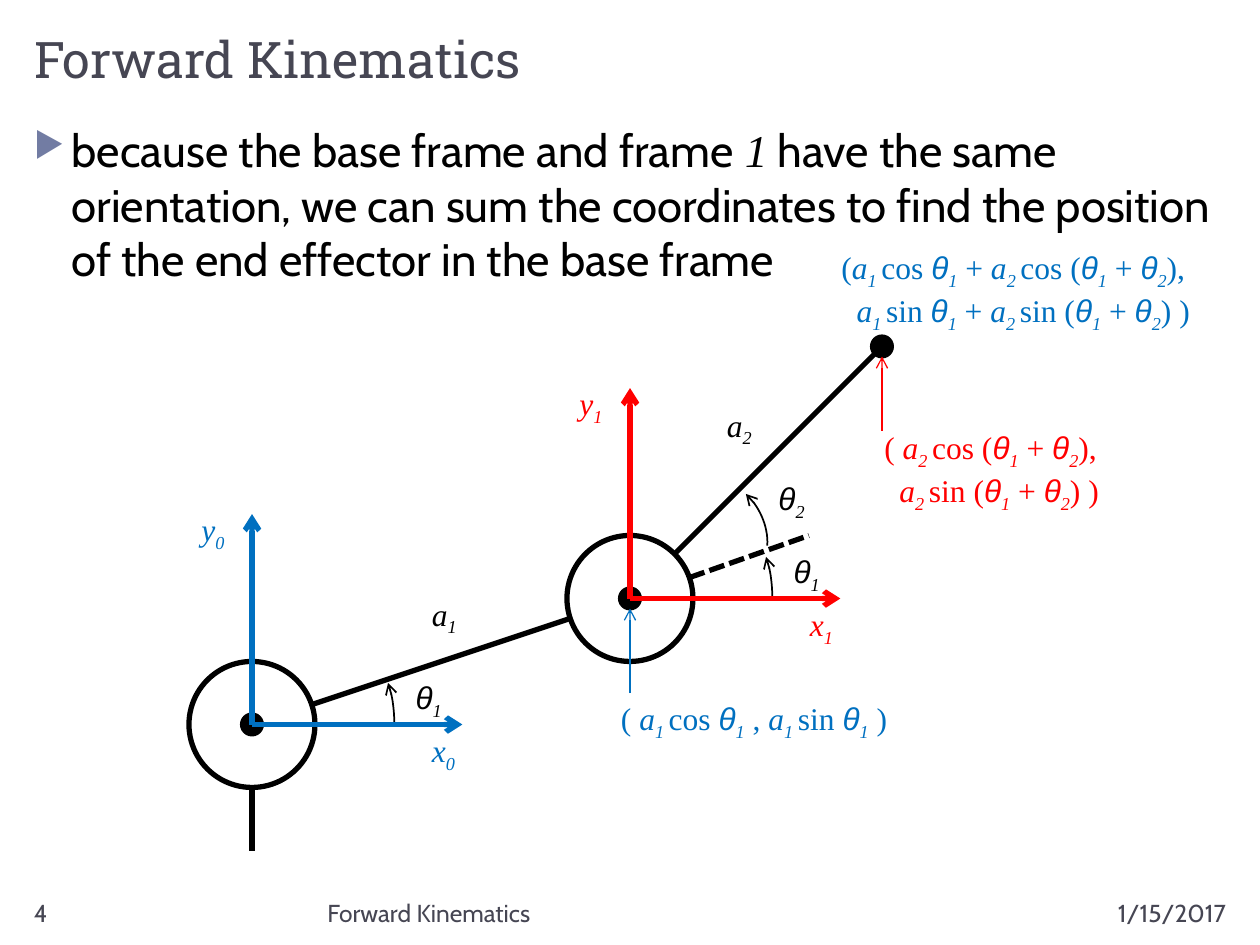
from dataclasses import dataclass

from lxml.etree import SubElement
from pptx import Presentation
from pptx.dml.color import RGBColor
from pptx.enum.dml import MSO_LINE as Dash
from pptx.enum.shapes import MSO_CONNECTOR as Link, MSO_SHAPE as Kind
from pptx.enum.text import MSO_ANCHOR as Anchor, MSO_AUTO_SIZE as Fit, PP_ALIGN as Align
from pptx.oxml.ns import qn
from pptx.util import Cm, Pt

BLACK = RGBColor(0, 0, 0)
WHITE = RGBColor(255, 255, 255)
BLUE = RGBColor(0x00, 0x70, 0xC0)
RED = RGBColor(255, 0, 0)
SLATE = RGBColor(0x46, 0x46, 0x53)
MARK = "727CA3"
SERIF = "Times New Roman"
SANS = "Cabin"

Point = tuple[float, float]


@dataclass
class Joint:
    x: float
    y: float
    color: RGBColor
    index: str


@dataclass
class Bar:
    start: Point
    end: Point
    color: RGBColor = BLACK
    width: float = 3
    arrow: bool = False
    dotted: bool = False


@dataclass
class Label:
    x: float
    y: float
    width: float
    lines: list[str]
    color: RGBColor = BLACK


@dataclass
class Foot:
    x: float
    width: float
    text: str
    align: Align = Align.LEFT


def unit(inches: float) -> Cm:
    return Cm(inches * 2.54)


def style(run, name: str, size: float, color: RGBColor) -> None:
    run.font.name = name
    run.font.size = Pt(size)
    run.font.color.rgb = color


def add_box(slide, x: float, y: float, width: float, height: float):
    frame = slide.shapes.add_textbox(*map(unit, (x, y, width, height))).text_frame
    frame.word_wrap = True
    return frame


def add_tip(line, end: str) -> None:
    SubElement(line._get_or_add_ln(), qn(f"a:{end}"), type="arrow")


def draw_bar(slide, bar: Bar) -> None:
    link = slide.shapes.add_connector(
        Link.STRAIGHT, *map(unit, (*bar.start, *bar.end)))
    link.line.color.rgb = bar.color
    link.line.width = Pt(bar.width)
    if bar.dotted:
        link.line.dash_style = Dash.SQUARE_DOT
    if bar.arrow:
        add_tip(link.line, "tailEnd")
    SubElement(link._element.spPr, qn("a:effectLst"))


def draw_disc(slide, x: float, y: float, size: float, fill: RGBColor, width: float) -> None:
    disc = slide.shapes.add_shape(
        Kind.OVAL, *map(unit, (x - size / 2, y - size / 2, size, size)))
    disc.shadow.inherit = False
    disc.fill.solid()
    disc.fill.fore_color.rgb = fill
    disc.line.color.rgb = BLACK
    disc.line.width = Pt(width)


def draw_dot(slide, x: float, y: float) -> None:
    draw_disc(slide, x, y, 0.17, BLACK, 1.5)


def draw_arc(slide, knots: list[Point], steps: int = 16) -> None:
    def curve(t: float) -> Point:
        s = 1 - t
        parts = (s ** 3, 3 * s * s * t, 3 * s * t * t, t ** 3)
        x, y = (sum(w * k[i] for w, k in zip(parts, knots)) for i in (0, 1))
        return unit(x), unit(y)

    dots = [curve(i / steps) for i in range(steps + 1)]
    pen = slide.shapes.build_freeform(*dots[0])
    pen.add_line_segments(dots[1:], close=False)
    arc = pen.convert_to_shape()
    arc.shadow.inherit = False
    arc.fill.background()
    arc.line.color.rgb = BLACK
    arc.line.width = Pt(1)
    add_tip(arc.line, "headEnd")


def draw_label(slide, label: Label) -> None:
    frame = add_box(slide, label.x, label.y, label.width, 0.1 + 0.3 * len(label.lines))
    for row, line in enumerate(label.lines):
        para = frame.add_paragraph() if row else frame.paragraphs[0]
        if row:
            para._p.get_or_add_pPr().set("marL", str(unit(0.12)))
        for part in line.split("|"):
            run = para.add_run()
            run.text = part.lstrip("_*")
            style(run, "Arial" if part == "θ" else SERIF, 18, label.color)
            run.font.italic = part[0] in "_*θ"
            if part[0] == "_":
                run.font._element.set("baseline", "-25000")


def draw_joint(slide, joint: Joint) -> None:
    x, y, color, index = joint.x, joint.y, joint.color, joint.index
    draw_disc(slide, x, y, 1, WHITE, 3)
    draw_dot(slide, x, y)
    draw_arc(slide, [(x + 1.08, y - 0.33), (x + 1.11, y - 0.25),
                     (x + 1.13, y - 0.13), (x + 1.13, y)])
    for end in ((x, y - 1.67), (x + 1.67, y)):
        draw_bar(slide, Bar((x, y), end, color, arrow=True))
    draw_label(slide, Label(x + 1.2, y - 0.42, 0.42, ["θ|_1"]))
    draw_label(slide, Label(x + 1.33, y, 0.41, [f"*x|_{index}"], color))
    draw_label(slide, Label(x - 0.5, y - 1.75, 0.41, [f"*y|_{index}"], color))


def draw_title(slide) -> None:
    title = slide.shapes.title
    title.left, title.top, title.width, title.height = map(unit, (0.17, 0.17, 9.67, 0.58))
    frame = title.text_frame
    frame.text = "Forward Kinematics"
    frame.auto_size = Fit.NONE
    frame.vertical_anchor = Anchor.BOTTOM
    para = frame.paragraphs[0]
    para.alignment = Align.LEFT
    style(para.runs[0], "Roboto Slab", 28.8, SLATE)


def draw_body(slide) -> None:
    para = add_box(slide, 0.17, 0.92, 9.67, 6).paragraphs[0]
    para.space_before = Pt(6)
    props = para._p.get_or_add_pPr()
    props.set("marL", str(unit(0.3)))
    props.set("indent", str(unit(-0.3)))
    SubElement(SubElement(props, qn("a:buClr")), qn("a:srgbClr"), val=MARK)
    SubElement(props, qn("a:buSzPct"), val="76000")
    SubElement(props, qn("a:buChar"), char="▶")
    for text, name in (
        ("because the base frame and frame ", SANS),
        ("1", SERIF),
        (" have the same orientation, we can sum the coordinates to find "
         "the position of the end effector in the base frame", SANS),
    ):
        run = para.add_run()
        run.text = text
        style(run, name, 26, BLACK)
        run.font.italic = name == SERIF


def draw_foot(slide, foot: Foot) -> None:
    frame = add_box(slide, foot.x, 7.08, foot.width, 0.27)
    frame.text = foot.text
    para = frame.paragraphs[0]
    para.alignment = foot.align
    style(para.runs[0], SANS, 14, SLATE)


def main() -> None:
    deck = Presentation()
    deck.slide_width, deck.slide_height = unit(10), unit(7.5)
    slide = deck.slides.add_slide(deck.slide_layouts[5])
    base, elbow, tip = (2, 5.75), (5, 4.75), (7, 2.75)

    draw_title(slide)
    draw_body(slide)
    for foot in (Foot(0.17, 2.17, "4"), Foot(2.5, 5.33, "Forward Kinematics"),
                 Foot(8, 1.83, "1/15/2017", Align.RIGHT)):
        draw_foot(slide, foot)

    for bar in (Bar((2, 6.75), (2, 5.83)), Bar(elbow, (6.42, 4.25), dotted=True),
                Bar(elbow, tip), Bar(base, elbow)):
        draw_bar(slide, bar)
    for joint in (Joint(*base, BLUE, "0"), Joint(*elbow, RED, "1")):
        draw_joint(slide, joint)
    draw_dot(slide, *tip)
    draw_arc(slide, [(5.92, 3.92), (6.02, 4.01), (6.1, 4.17), (6.09, 4.33)])
    draw_bar(slide, Bar((5, 5.5), (5, 4.83), BLUE, 0.75, arrow=True))
    draw_bar(slide, Bar((7, 3.42), (7, 2.83), RED, 0.75, arrow=True))

    total = "θ|_1| + |θ|_2"
    for label in (
        Label(3.33, 4.67, 0.41, ["*a|_1"]),
        Label(5.67, 3.17, 0.41, ["*a|_2"]),
        Label(6.08, 3.75, 0.42, ["θ|_2"]),
        Label(4.83, 5.5, 2.4, ["( |*a|_1 |cos |θ|_1| , |*a|_1 |sin |θ|_1| )"], BLUE),
        Label(6.92, 3.35, 2.02, [f"( |*a|_2 |cos (|{total}|),",
                                 f"*a|_2 |sin (|{total}|) )"], RED),
        Label(6.58, 1.92, 3.15, [f"(|*a|_1 |cos |θ|_1| + |*a|_2 |cos (|{total}|),",
                                 f"*a|_1 |sin |θ|_1| + |*a|_2 |sin (|{total}|) )"], BLUE),
    ):
        draw_label(slide, label)
    deck.save("out.pptx")


if __name__ == "__main__":
    main()
